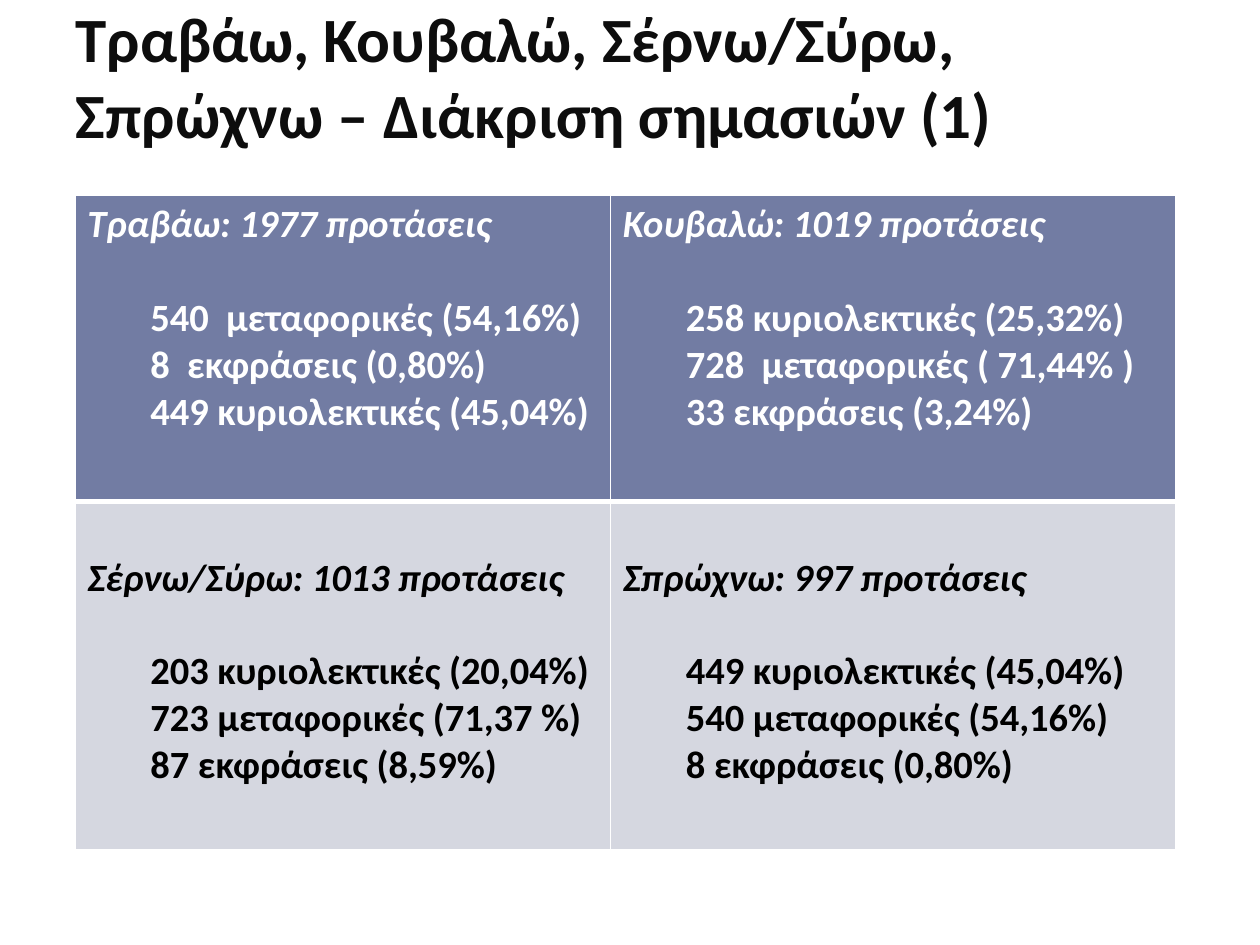
from lxml import etree
from pptx import Presentation
from pptx.dml.color import RGBColor
from pptx.enum.text import MSO_ANCHOR, PP_ALIGN
from pptx.oxml.ns import qn
from pptx.util import Pt

BOTTOM = MSO_ANCHOR.BOTTOM
LEFT = PP_ALIGN.LEFT


class Theme:
    font = "Calibri"
    title = RGBColor.from_string("0D0D0D")
    text = [RGBColor.from_string(c) for c in ("FFFFFF", "000000")]
    fill = [RGBColor.from_string(c) for c in ("727CA3", "D5D7E0")]
    rule = "FFFFFF"
    big, body = Pt(36), Pt(22)
    gap = Pt(26.8)


def style(para, size, color, italic=False):
    para.alignment = LEFT
    for run in para.runs:
        font = run.font
        font.name, font.size, font.bold = Theme.font, size, True
        font.italic = italic
        font.color.rgb = color


def border(cell, low):
    props = cell._tc.get_or_add_tcPr()
    for side, wide in (("L", 1), ("R", 1), ("T", 1), ("B", low)):
        line = etree.SubElement(props, qn("a:ln" + side), w=str(Pt(wide)))
        fill = etree.SubElement(line, qn("a:solidFill"))
        etree.SubElement(fill, qn("a:srgbClr"), val=Theme.rule)


prs = Presentation()
prs.slide_width, prs.slide_height = Pt(720), Pt(540)
slide = prs.slides.add_slide(prs.slide_layouts[5])

# Title
title = slide.shapes.title
title.left, title.top, title.width, title.height = Pt(36), Pt(12), Pt(648), Pt(78)
frame = title.text_frame
frame.text = "Τραβάω, Κουβαλώ, Σέρνω/Σύρω, Σπρώχνω – Διάκριση σημασιών (1)"
frame.vertical_anchor = BOTTOM
style(frame.paragraphs[0], Theme.big, Theme.title)

# One cell per verb: heading, then counts by sense
verbs = [
    [
        ["Τραβάω: 1977 προτάσεις", "540  μεταφορικές (54,16%)",
         "8  εκφράσεις (0,80%)", "449 κυριολεκτικές (45,04%)"],
        ["Κουβαλώ: 1019 προτάσεις", "258 κυριολεκτικές (25,32%)",
         "728  μεταφορικές ( 71,44% )", "33 εκφράσεις (3,24%)"],
    ],
    [
        ["Σέρνω/Σύρω: 1013 προτάσεις", "203 κυριολεκτικές (20,04%)",
         "723 μεταφορικές (71,37 %)", "87 εκφράσεις (8,59%)"],
        ["Σπρώχνω: 997 προτάσεις", "449 κυριολεκτικές (45,04%)",
         "540 μεταφορικές (54,16%)", "8 εκφράσεις (0,80%)"],
    ],
]
widths, heights = [306, 323], [175, 199]

# Table
table = slide.shapes.add_table(
    2, 2, Pt(42.75), Pt(111.5), Pt(sum(widths)), Pt(sum(heights))).table
table.horz_banding = False
for col, width in zip(table.columns, widths):
    col.width = Pt(width)
for row, height in zip(table.rows, heights):
    row.height = Pt(height)

for r, line in enumerate(verbs):
    for c, lines in enumerate(line):
        cell = table.cell(r, c)
        border(cell, 1 if r else 3)
        cell.fill.solid()
        cell.fill.fore_color.rgb = Theme.fill[r]
        cell.margin_top = Pt(3.6) + r * Theme.gap
        cell.text_frame.text = "\n".join(lines)
        for i, para in enumerate(cell.text_frame.paragraphs):
            if i:
                para.level = 1
                props = para._p.get_or_add_pPr()
                props.set("marL", str(Pt(36)))
                props.set("indent", "0")
            if i == 1:
                para.space_before = Theme.gap
            style(para, Theme.body, Theme.text[r], italic=i == 0)

prs.save("out.pptx")
